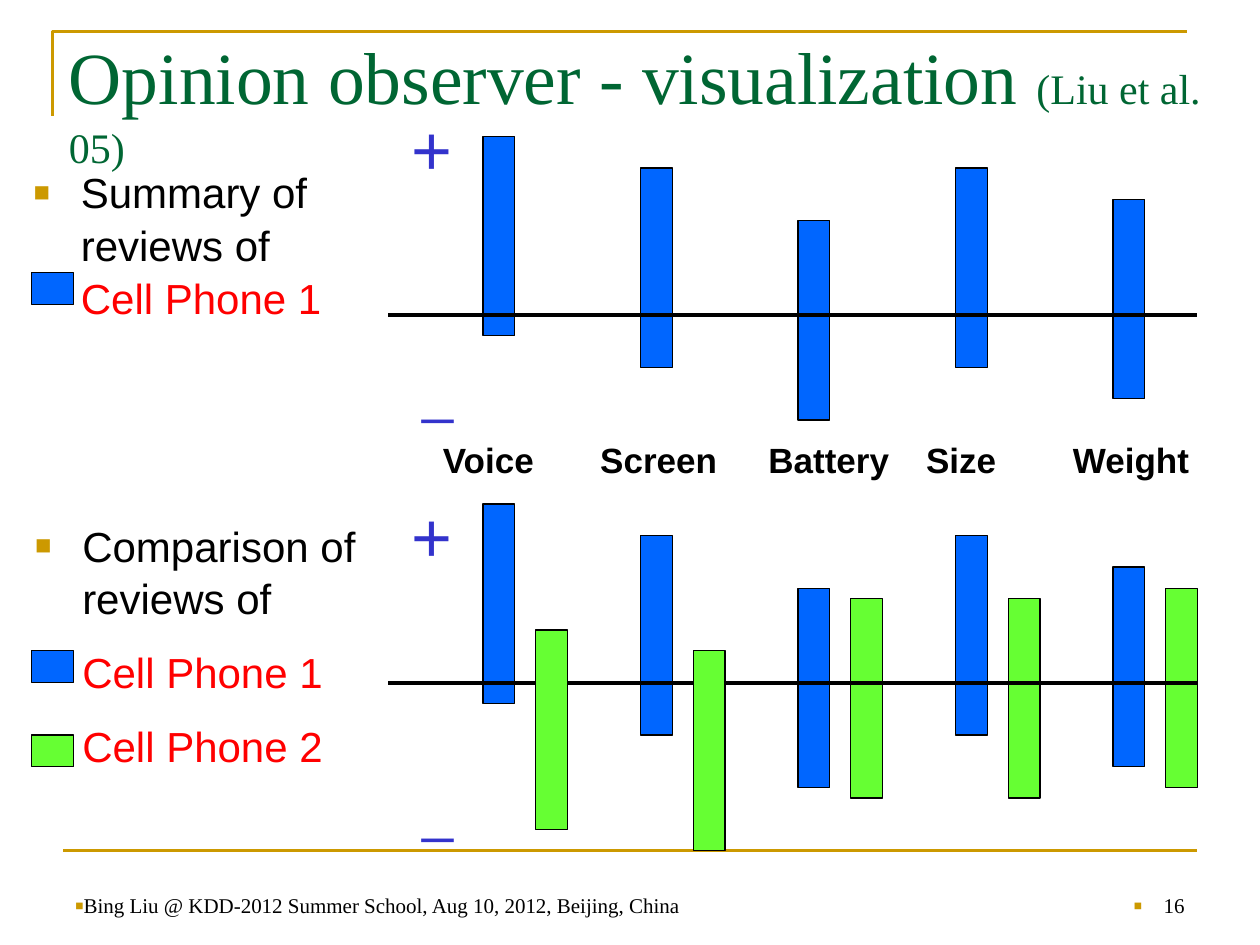
from lxml import etree
from pptx import Presentation
from pptx.dml.color import RGBColor
from pptx.enum import shapes, text
from pptx.oxml import ns
from pptx.util import Cm, Pt

BLACK = RGBColor(0x00, 0x00, 0x00)
GOLD = RGBColor(0xCC, 0x99, 0x00)
DARK_GREEN = RGBColor(0x00, 0x66, 0x33)
BLUE = RGBColor(0x00, 0x66, 0xFF)
LIME = RGBColor(0x66, 0xFF, 0x33)
RED = RGBColor(0xFF, 0x00, 0x00)
INDIGO = RGBColor(0x33, 0x33, 0xCC)

BODY = {"size": Pt(24), "name": "Arial", "color": BLACK}
PHONE = {**BODY, "color": RED}
FEATURE = {"size": Pt(20), "name": "Arial", "color": BLACK, "bold": True}
FOOTER = {"size": Pt(12), "name": "Times New Roman", "color": BLACK}
TITLE = {"size": Pt(42), "name": "Times New Roman", "color": DARK_GREEN}
CITATION = {**TITLE, "size": Pt(24)}
PLUS = {"size": Pt(40), "name": "Arial", "color": INDIGO}
MINUS = {**PLUS, "size": Pt(32)}

presentation = Presentation()
presentation.slide_width, presentation.slide_height = Cm(25.4), Cm(19.05)
slide = presentation.slides.add_slide(presentation.slide_layouts[6])


def add_text(box, paragraphs, anchor=text.MSO_ANCHOR.TOP, spacing=1.05):
    """Each paragraph is (runs, paragraph values, indent in cm, hanging part in cm, bulleted)."""
    frame = slide.shapes.add_textbox(*map(Cm, box)).text_frame
    frame.word_wrap = True
    frame.vertical_anchor = anchor
    for index, (runs, values, indent, hanging, bulleted) in enumerate(paragraphs):
        paragraph = frame.add_paragraph() if index else frame.paragraphs[0]
        paragraph.line_spacing = spacing
        for key, value in values.items():
            setattr(paragraph, key, value)
        properties = paragraph._p.get_or_add_pPr()
        properties.set("marL", str(Cm(indent)))
        properties.set("indent", str(-Cm(hanging)))
        if bulleted:
            color = etree.SubElement(properties, ns.qn("a:buClr"))
            etree.SubElement(color, ns.qn("a:srgbClr"), val=str(GOLD))
            etree.SubElement(properties, ns.qn("a:buSzPct"), val="65000")
            etree.SubElement(properties, ns.qn("a:buFont"), typeface="Arial")
            etree.SubElement(properties, ns.qn("a:buChar"), char="■")
        for position, (words, style) in enumerate(runs):
            if words.startswith("\n"):
                paragraph.add_line_break()
            run = paragraph.add_run()
            run.text = words.strip("\n")
            for key, value in style.items():
                if key == "color":
                    run.font.color.rgb = value
                else:
                    setattr(run.font, key, value)


def add_mark(kind, box, color, weight):
    """Draw a bar or key as a rectangle (kind "bar"), or a line from point to point."""
    if kind == "bar":
        mark = slide.shapes.add_shape(shapes.MSO_SHAPE.RECTANGLE, *map(Cm, box))
        mark.shadow.inherit = False
        mark.fill.solid()
        mark.fill.fore_color.rgb = color
        mark.line.color.rgb = BLACK
    else:
        mark = slide.shapes.add_connector(shapes.MSO_CONNECTOR.STRAIGHT, *map(Cm, box))
        etree.SubElement(mark._element.spPr, ns.qn("a:effectLst"))
        mark.line.color.rgb = color
    mark.line.width = Pt(weight)


# Frame and footer
builder = slide.shapes.build_freeform(Cm(1.06), Cm(2.33))
builder.add_line_segments([(Cm(1.06), Cm(0.64)), (Cm(23.92), Cm(0.64))], close=False)
corner = builder.convert_to_shape()
corner.shadow.inherit = False
corner.fill.background()
corner.line.color.rgb = GOLD
corner.line.width = Pt(1.5)
add_mark("line", (1.27, 17.15, 24.13, 17.15), GOLD, 1.5)
add_text((1.27, 17.36, 15.45, 1.27),
         [([("Bing Liu @ KDD-2012 Summer School, Aug 10, 2012, Beijing, China", FOOTER)],
           {}, 0, 0, True)], text.MSO_ANCHOR.BOTTOM, 1.0)
add_text((18.2, 17.36, 5.93, 1.27),
         [([("16", FOOTER)], {"alignment": text.PP_ALIGN.RIGHT}, 0.6, 0.6, True)],
         text.MSO_ANCHOR.BOTTOM, 1.0)

add_text((1.14, 0.41, 23.88, 3.18),
         [([("Opinion observer - visualization ", TITLE), ("(Liu et al. 05)", CITATION)],
           {}, 0, 0, False)], text.MSO_ANCHOR.MIDDLE)

# Bar charts: how far each bar rises above its axis, from Voice to Weight
PITCH, BAR_WIDTH, BAR_HEIGHT = 12.7 / 4, 0.64, 4.02
FIRST_BAR, PHONE_STEP = 9.74, 1.06
phone_1 = [(feature, 0, rise, BLUE) for feature, rise in enumerate((3.6, 2.96, 1.9, 2.96, 2.33))]
phone_2 = [(feature, 1, rise, LIME) for feature, rise in enumerate((1.06, 0.64, 1.69, 1.69, 1.9))]
charts = [
    (6.35, phone_1, [], 6.99),
    (13.76, phone_2[2:] + phone_1, phone_2[:2], 15.44),
]
for axis, bars_behind, bars_in_front, minus_top in charts:
    for bars in (bars_behind, bars_in_front):
        for feature, phone, rise, color in bars:
            left = FIRST_BAR + feature * PITCH + phone * PHONE_STEP
            add_mark("bar", (left, axis - rise, BAR_WIDTH, BAR_HEIGHT), color, 0.75)
        if bars is bars_behind:
            add_mark("line", (7.83, axis, 24.13, axis), BLACK, 2.25)
    for sign, style, left, top in (("+", PLUS, 8.05, axis - 4.44 + (0.41 if bars_in_front else 0)),
                                   ("_", MINUS, 8.26, minus_top)):
        add_text((left, top, 1.9, 1.8), [([(sign, style)], {}, 0.95, 0.95, False)])

for feature, left in (("Voice", 8.68), ("Screen", 11.85), ("Battery", 15.24),
                      ("Size", 18.42), ("Weight", 21.38)):
    add_text((left, 8.68, 3.2, 1.27), [([(feature, FEATURE)], {}, 0.95, 0.95, False)])

# Descriptions with colour keys
add_text((0.43, 3.18, 7.62, 3.33),
         [([("Summary of reviews of", BODY), ("\nCell Phone 1", PHONE)], {}, 0.95, 0.95, True)])
gap = {"space_before": Pt(12)}
add_text((0.46, 10.31, 8.05, 5.38),
         [([("Comparison of reviews of", BODY)], {}, 0.95, 0.95, True),
          ([("Cell Phone 1", PHONE)], gap, 0.95, 0, False),
          ([("Cell Phone 2", PHONE)], gap, 0.95, 0, False)])
for top, color in ((5.5, BLUE), (13.12, BLUE), (14.82, LIME)):
    add_mark("bar", (0.64, top, 0.85, 0.64), color, 0.75)

presentation.save("out.pptx")
